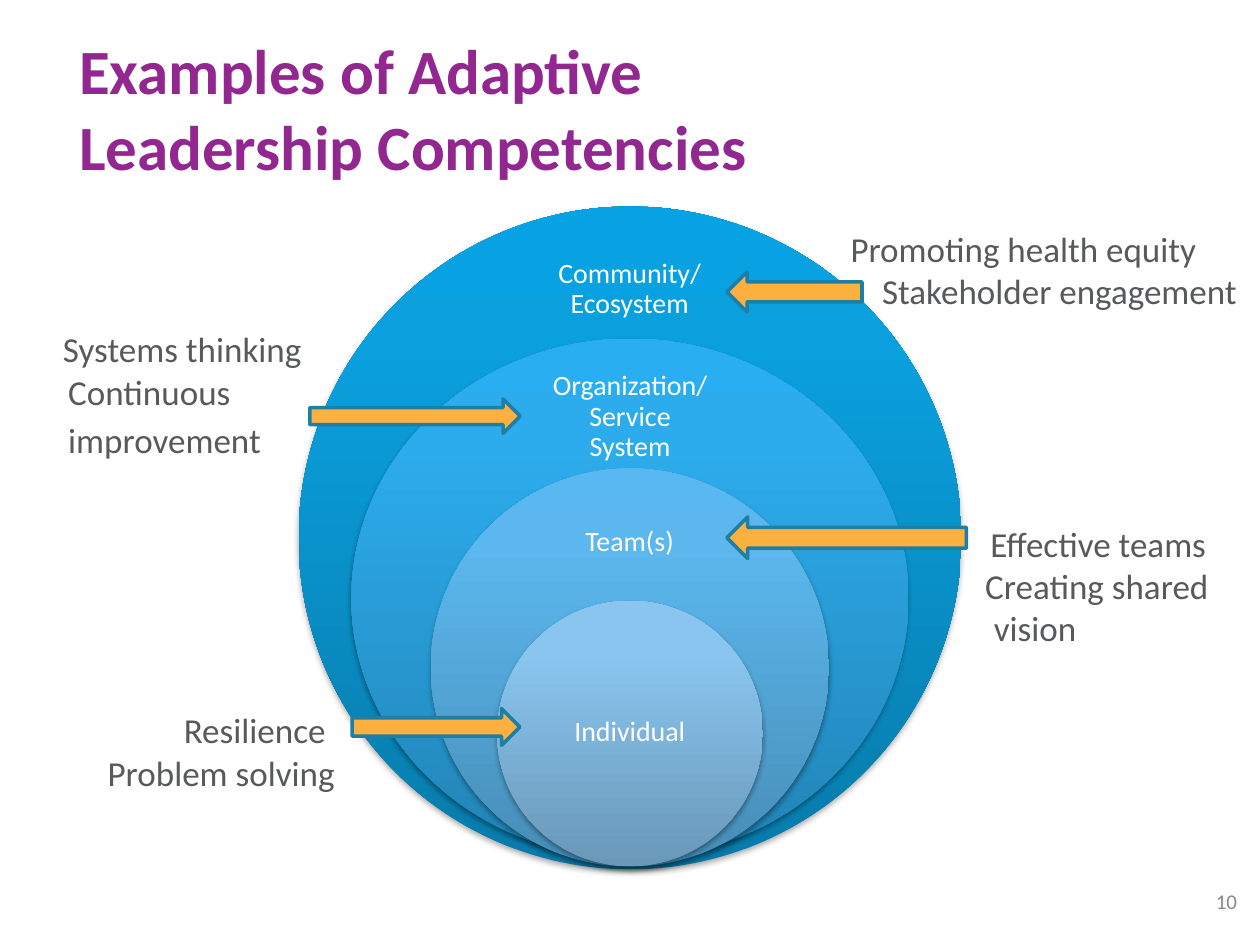
from dataclasses import dataclass

from lxml import etree
from pptx import Presentation
from pptx.dml.color import RGBColor
from pptx.enum.shapes import MSO_SHAPE as Shape
from pptx.enum.text import MSO_ANCHOR as Anchor, MSO_AUTO_SIZE as AutoSize, PP_ALIGN as Align
from pptx.oxml.ns import qn
from pptx.util import Pt


@dataclass(frozen=True)
class Theme:
    """Colours, font and type sizes of the slide."""
    font: str = "Calibri"
    title: str = "92278F"
    note: str = "58595B"
    label: str = "FFFFFF"
    number: str = "898989"
    arrow: str = "FBB040"
    arrow_line: str = "1D7EA6"
    shadow: str = "000000"
    title_size: int = 36
    note_size: int = 20
    label_size: int = 16
    number_size: int = 12


THEME = Theme()
RINGS = [
    ((170.6, 118, 378.8, 378.8), ("087BAB", "0AA0DE", "06A2E4"),
     (306.8, 136.8, 106, 57), ["Community/Ecosystem"]),
    ((200.8, 193.5, 318.4, 296.8), ("2284B6", "2CACEC", "29AEF1"),
     (304.6, 211.7, 110.8, 53.3), ["Organization/", "Service System"]),
    ((246.2, 267.7, 227.5, 227.5), ("468DB6", "5BB7ED", "59B8F1"),
     (306.8, 284.4, 106, 51), ["Team(s)"]),
    ((284.1, 343.3, 151.8, 151.8), ("6A98B8", "89C5EF", "88C6F2"),
     (306.4, 380.9, 107, 75.6), ["Individual"]),
]
ARROWS = [
    (Shape.RIGHT_ARROW, (177.1, 228, 120.2, 19.6)),
    (Shape.RIGHT_ARROW, (201.2, 404.9, 95.9, 21)),
    (Shape.LEFT_ARROW, (415.4, 155.3, 77.2, 23)),
    (Shape.LEFT_ARROW, (415.4, 295.4, 136.9, 23.8)),
]
NOTES = [
    ((486, 130, 234, 50), [("Promoting health equity", 0, 0), ("Stakeholder engagement", 18, 0)]),
    ((36, 187, 144, 78), [("Systems thinking", 0, 0), ("Continuous", 3, 0.5), ("improvement", 3, 3.5)]),
    ((563, 298.5, 150, 74), [("Effective teams", 3, 0), ("Creating shared", 0, 0), ("vision", 5, 0)]),
    ((61.5, 405, 140, 50), [("Resilience", 43.5, 0), ("Problem solving", 0, 0.5)]),
]


def points(box):
    """Turn a box of numbers into lengths in points."""
    return [Pt(value) for value in box]


def write(shape, lines, size, color, align=Align.LEFT, anchor=Anchor.TOP, inset=0, bold=False):
    """Fill a shape with formatted paragraphs and return them."""
    frame = shape.text_frame
    frame.text = "\n".join(lines)
    frame.word_wrap = True
    frame.auto_size = AutoSize.NONE
    frame.vertical_anchor = anchor
    frame.margin_left = frame.margin_right = frame.margin_top = frame.margin_bottom = Pt(inset)
    for paragraph in frame.paragraphs:
        paragraph.alignment = align
        for run in paragraph.runs:
            run.font.name = THEME.font
            run.font.size = Pt(size)
            run.font.bold = bold
            run.font.color.rgb = RGBColor.from_string(color)
    return frame.paragraphs


def add_color(parent, color):
    """Append an RGB colour element and return it."""
    return etree.SubElement(parent, qn("a:srgbClr"), val=color)


def style_ring(ring, colors):
    """Give a ring its upward gradient and soft shadow."""
    ring.line.fill.background()
    ring.shadow.inherit = False
    ring.fill.gradient()
    gradient = ring.element.spPr.find(qn("a:gradFill"))
    stops = gradient.find(qn("a:gsLst"))
    for stop in list(stops):
        stops.remove(stop)
    for position, color in zip((0, 80000, 100000), colors):
        add_color(etree.SubElement(stops, qn("a:gs"), pos=str(position)), color)
    gradient.find(qn("a:lin")).set("ang", "16200000")
    effects = ring.element.spPr.find(qn("a:effectLst"))
    shadow = etree.SubElement(effects, qn("a:outerShdw"), blurRad=str(Pt(3.1)),
                              dist=str(Pt(1.8)), dir="5400000", rotWithShape="0")
    etree.SubElement(add_color(shadow, THEME.shadow), qn("a:alpha"), val="35000")


def add_title(slide, box, text):
    """Place and format the title placeholder."""
    title = slide.shapes.title
    title.left, title.top, title.width, title.height = points(box)
    write(title, [text], THEME.title_size, THEME.title, anchor=Anchor.MIDDLE, inset=7.2, bold=True)


def add_rings(slide, left, top):
    """Draw the nested rings with their labels, moved by left and top."""
    group = slide.shapes.add_group_shape()
    for ring_box, colors, label_box, lines in RINGS:
        x, y, width, height = ring_box
        ring = group.shapes.add_shape(Shape.OVAL, *points((left + x, top + y, width, height)))
        style_ring(ring, colors)
        x, y, width, height = label_box
        label = group.shapes.add_textbox(*points((left + x, top + y, width, height)))
        for paragraph in write(label, lines, THEME.label_size, THEME.label,
                               Align.CENTER, Anchor.MIDDLE, 8.6):
            paragraph.line_spacing = 0.9


def add_arrow(slide, kind, box):
    """Draw one arrow pointing into the rings."""
    arrow = slide.shapes.add_shape(kind, *points(box))
    arrow.shadow.inherit = False
    arrow.fill.solid()
    arrow.fill.fore_color.rgb = RGBColor.from_string(THEME.arrow)
    arrow.line.color.rgb = RGBColor.from_string(THEME.arrow_line)
    arrow.line.width = Pt(2)


def add_note(slide, box, lines):
    """Write one group of competencies, each line with its indent and space before."""
    note = slide.shapes.add_textbox(*points(box))
    paragraphs = write(note, [text for text, _, _ in lines], THEME.note_size, THEME.note)
    for paragraph, (_, indent, space) in zip(paragraphs, lines):
        paragraph.space_before = Pt(space)
        paragraph._p.get_or_add_pPr().set("marL", str(Pt(indent)))


def add_number(slide, box, text):
    """Write the slide number."""
    number = slide.shapes.add_textbox(*points(box))
    write(number, [text], THEME.number_size, THEME.number, Align.RIGHT, Anchor.MIDDLE, 7.2)


def main():
    """Build and save the slide."""
    presentation = Presentation()
    presentation.slide_width, presentation.slide_height = Pt(720), Pt(540)
    slide = presentation.slides.add_slide(presentation.slide_layouts[5])
    add_title(slide, (38, 16.5, 426, 90), "Examples of Adaptive Leadership Competencies")
    add_rings(slide, 0, 0)
    for kind, box in ARROWS:
        add_arrow(slide, kind, box)
    for box, lines in NOTES:
        add_note(slide, box, lines)
    add_number(slide, (678, 500.5, 36, 29), "10")
    presentation.save("out.pptx")


if __name__ == "__main__":
    main()
